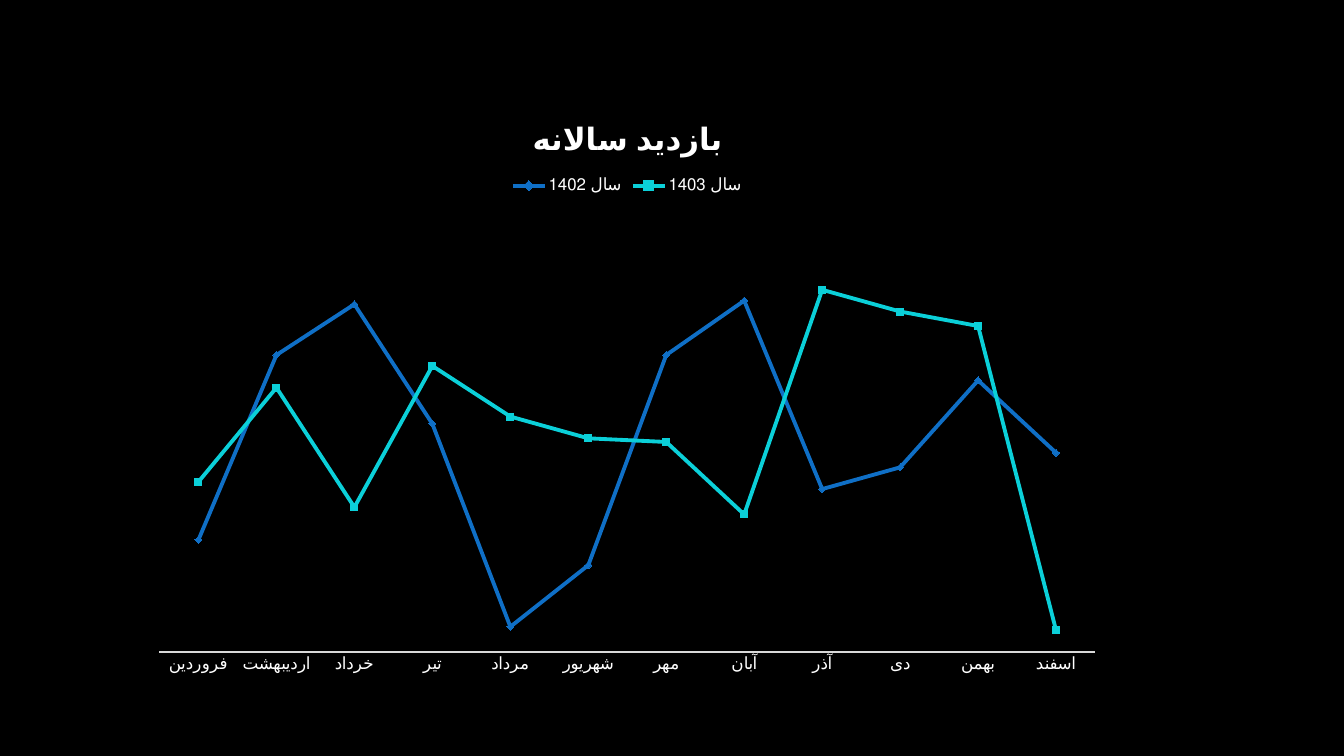
import pptx
import pptx.chart.data
import pptx.dml.color
import pptx.enum.chart
import pptx.oxml
import pptx.util
from pptx.oxml.ns import nsdecls

Pt = pptx.util.Pt
ENUM = pptx.enum.chart
FONT = "Calibri"
COLORS = {
    "back": "000000", "text": "FFFFFF", "axis": "D9D9D9",
    "blue": "0F6FC6", "blue_dot": "066FCF",
    "cyan": "0BD0D9", "cyan_dot": "01D9E3",
}
MONTHS = ["فروردین", "اردیبهشت", "خرداد", "تیر", "مرداد", "شهریور",
          "مهر", "آبان", "آذر", "دی", "بهمن", "اسفند"]
YEARS = [
    ("سال 1402", "blue", ENUM.XL_MARKER_STYLE.DIAMOND,
     [31, 82, 96, 63, 7, 24, 82, 97, 45, 51, 75, 55]),
    ("سال 1403", "cyan", ENUM.XL_MARKER_STYLE.SQUARE,
     [47, 73, 40, 79, 65, 59, 58, 38, 100, 94, 90, 6]),
]
# Plot area as shares of the chart box
PLOT = {"x": 0.02, "y": 0.2, "w": 0.96, "h": 0.74}


def paint(fill, name):
    fill.solid()
    fill.fore_color.rgb = pptx.dml.color.RGBColor.from_string(COLORS[name])


def style(font, size, bold=False):
    font.name, font.size, font.bold = FONT, Pt(size), bold
    paint(font.fill, "text")


def set_plot(chart):
    sides = "".join(f'<c:{key} val="{val}"/>' for key, val in PLOT.items())
    layout = pptx.oxml.parse_xml(
        f'<c:layout {nsdecls("c")}><c:manualLayout>'
        '<c:layoutTarget val="inner"/><c:xMode val="edge"/>'
        f'<c:yMode val="edge"/>{sides}</c:manualLayout></c:layout>')
    area = chart.element.chart.plotArea
    for old in area.findall(layout.tag):
        area.remove(old)
    area.insert(0, layout)


def add_visits(slide, left, top, width, height):
    data = pptx.chart.data.CategoryChartData(number_format="0")
    data.categories = MONTHS
    for name, _, _, vals in YEARS:
        data.add_series(name, vals)
    chart = slide.shapes.add_chart(
        ENUM.XL_CHART_TYPE.LINE_MARKERS, left, top, width, height, data).chart
    style(chart.font, 10)
    set_plot(chart)

    # Title
    run = chart.chart_title.text_frame.paragraphs[0].add_run()
    run.text = "بازدید سالانه"
    style(run.font, 22, True)
    chart.chart_title.include_in_layout = False

    # Legend
    chart.has_legend = True
    chart.legend.position = ENUM.XL_LEGEND_POSITION.TOP
    chart.legend.include_in_layout = False
    style(chart.legend.font, 12)

    # Axes
    months = chart.category_axis
    months.major_tick_mark = ENUM.XL_TICK_MARK.NONE
    months.minor_tick_mark = ENUM.XL_TICK_MARK.NONE
    style(months.tick_labels.font, 12)
    months.format.line.width = Pt(1)
    paint(months.format.line.fill, "axis")
    visits = chart.value_axis
    visits.minimum_scale, visits.maximum_scale = 0, 120
    visits.has_major_gridlines = False
    visits.visible = False

    # Lines
    chart.plots[0].vary_by_categories = False
    for line, (_, color, mark, _) in zip(chart.plots[0].series, YEARS):
        line.smooth = False
        line.format.line.width = Pt(2.75)
        paint(line.format.line.fill, color)
        line.marker.style, line.marker.size = mark, 5
        paint(line.marker.format.fill, color + "_dot")
        paint(line.marker.format.line.fill, color + "_dot")


def main():
    deck = pptx.Presentation()
    deck.slide_width, deck.slide_height = Pt(960), Pt(540)
    slide = deck.slides.add_slide(deck.slide_layouts[6])
    paint(slide.background.fill, "back")
    add_visits(slide, Pt(100), Pt(71.3), Pt(696.2), Pt(419.8))
    deck.save("out.pptx")


if __name__ == "__main__":
    main()
